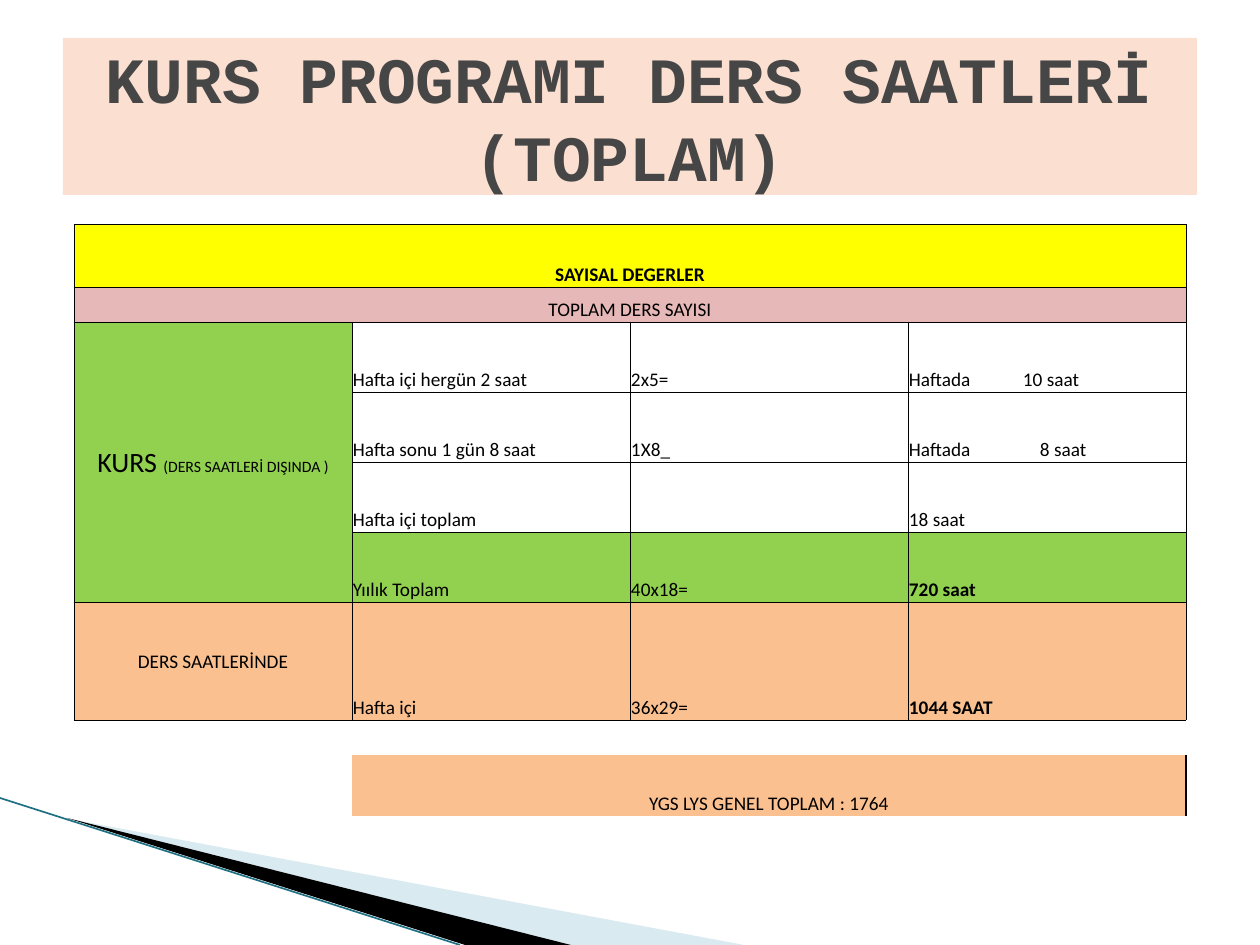
import dataclasses

import lxml.etree
import pptx
import pptx.dml.color
import pptx.enum.shapes
import pptx.enum.text
import pptx.oxml.ns
import pptx.util

SCALE = 914400 / 126
ALIGN = pptx.enum.text.PP_ALIGN
ANCHOR = pptx.enum.text.MSO_ANCHOR


@dataclasses.dataclass(frozen=True)
class Theme:
    body_font: str = "Calibri"
    title_font: str = "Courier New"
    title_size: float = 36.9
    course_size: int = 16
    body_size: int = 11
    note_size: int = 9
    ink: str = "000000"
    title_ink: str = "464646"
    title_fill: str = "FBE0D1"
    yellow: str = "FFFF00"
    rose: str = "E6B9B8"
    green: str = "92D050"
    orange: str = "FAC090"
    pale_wedge: str = "A0CBDC"
    edge: str = "1F7083"


def px(value):
    return pptx.util.Emu(round(value * SCALE))


def rgb(value):
    return pptx.dml.color.RGBColor.from_string(value)


def child(parent, tag, **attributes):
    return lxml.etree.SubElement(parent, pptx.oxml.ns.qn(tag), attributes)


def apply(target, values):
    for name, value in values.items():
        setattr(target, name, value)


class SlideBuilder:
    """Draws styled elements on the current slide."""

    def __init__(self, slide, theme):
        self.slide = slide
        self.theme = theme

    def paint(self, shape, color):
        shape.shadow.inherit = False
        shape.fill.solid()
        shape.fill.fore_color.rgb = rgb(color)
        shape.line.fill.background()

    def words(self, paragraph, text, size, color, font, bold=False):
        run = paragraph.add_run()
        run.text = text
        apply(run.font, {"size": pptx.util.Pt(size), "name": font, "bold": bold})
        run.font.color.rgb = rgb(color)

    def wedge(self, points, color, opacity=100):
        outline = self.slide.shapes.build_freeform(*points[0], scale=SCALE)
        outline.add_line_segments(points[1:], close=True)
        wedge = outline.convert_to_shape()
        self.paint(wedge, color)
        if opacity < 100:
            tint = wedge._element.spPr.find(".//" + pptx.oxml.ns.qn("a:srgbClr"))
            child(tint, "a:alpha", val=str(opacity * 1000))

    def line(self, start, end, color, width):
        edge = self.slide.shapes.add_connector(
            pptx.enum.shapes.MSO_CONNECTOR.STRAIGHT, *map(px, start + end))
        edge.line.color.rgb = rgb(color)
        edge.line.width = pptx.util.Pt(width)
        child(edge._element.spPr, "a:effectLst")

    def title(self, text, box):
        theme = self.theme
        banner = self.slide.shapes.add_shape(
            pptx.enum.shapes.MSO_SHAPE.RECTANGLE, *map(px, box))
        self.paint(banner, theme.title_fill)
        apply(banner.text_frame, {"word_wrap": True, "vertical_anchor": ANCHOR.MIDDLE})
        heading = banner.text_frame.paragraphs[0]
        heading.alignment = ALIGN.CENTER
        self.words(heading, text, theme.title_size, theme.title_ink, theme.title_font, True)

    def table(self, left, top, widths, heights):
        table = self.slide.shapes.add_table(
            len(heights), len(widths), px(left), px(top),
            px(sum(widths)), px(sum(heights))).table
        apply(table, {"first_row": False, "horz_banding": False})
        for column, width in zip(table.columns, widths):
            column.width = px(width)
        for row, height in zip(table.rows, heights):
            row.height = px(height)
        return table

    def borders(self, cell, sides, width):
        properties = cell._tc.get_or_add_tcPr()
        for side in "LRTB":
            border = child(properties, f"a:ln{side}", w=str(int(pptx.util.Pt(width))))
            if side in sides:
                child(child(border, "a:solidFill"), "a:srgbClr", val=self.theme.ink)
            else:
                child(border, "a:noFill")

    def cell(self, cell, parts, fill=None, align=ALIGN.LEFT,
             anchor=ANCHOR.BOTTOM, bold=False, tab=None):
        theme = self.theme
        apply(cell, {"margin_left": px(1), "margin_right": px(1), "margin_top": px(1),
                     "margin_bottom": 0, "vertical_anchor": anchor})
        if fill:
            cell.fill.solid()
            cell.fill.fore_color.rgb = rgb(fill)
        else:
            cell.fill.background()
        paragraph = cell.text_frame.paragraphs[0]
        paragraph.alignment = align
        if tab:
            stops = child(paragraph._p.get_or_add_pPr(), "a:tabLst")
            child(stops, "a:tab", pos=str(int(px(tab))), algn="l")
        for text, size in parts:
            self.words(paragraph, text, size, theme.ink, theme.body_font, bold)
        if not parts:
            child(paragraph._p, "a:endParaRPr", sz=str(theme.body_size * 100))


def fill_hours(builder, hours):
    theme = builder.theme
    last_row = len(hours.rows) - 1
    for row in range(last_row + 1):
        for column in range(4):
            if row < last_row - 1:
                sides, width = "LRTB", 0.5
            elif row == last_row - 1:
                sides, width = "T", 0.5
            else:
                sides, width = ("R" if column else ""), 1
            builder.borders(hours.cell(row, column), sides, width)

    for start, end in (((0, 0), (0, 3)), ((1, 0), (1, 3)),
                       ((2, 0), (5, 0)), ((8, 1), (8, 3))):
        hours.cell(*start).merge(hours.cell(*end))

    centred = {"align": ALIGN.CENTER}
    middle = {"align": ALIGN.CENTER, "anchor": ANCHOR.MIDDLE}
    spans = {
        (0, 0): ("SAYISAL DEGERLER", theme.yellow, {**centred, "bold": True}),
        (1, 0): ("TOPLAM DERS SAYISI", theme.rose, centred),
        (6, 0): ("DERS SAATLERİNDE", theme.orange, middle),
        (8, 1): ("YGS LYS GENEL TOPLAM : 1764", theme.orange, centred),
    }
    for place, (text, fill, layout) in spans.items():
        builder.cell(hours.cell(*place), [(text, theme.body_size)], fill, **layout)
    builder.cell(hours.cell(2, 0), [("KURS ", theme.course_size),
                                    ("(DERS SAATLERİ DIŞINDA )", theme.note_size)],
                 theme.green, **middle)

    lessons = (
        (("Hafta içi hergün 2 saat", "2x5=", "Haftada\t10 saat"), None, False, 114),
        (("Hafta sonu 1 gün 8 saat", "1X8_", "Haftada\t8 saat"), None, False, 131),
        (("Hafta içi toplam", "", "18 saat"), None, False, None),
        (("Yıılık Toplam", "40x18=", "720 saat"), theme.green, True, None),
        (("Hafta içi", "36x29=", "1044 SAAT"), theme.orange, True, None),
    )
    for row, (texts, fill, total, tab) in enumerate(lessons, 2):
        for column, text in enumerate(texts, 1):
            last = column == 3
            builder.cell(hours.cell(row, column),
                         [(text, theme.body_size)] if text else [], fill,
                         bold=total and last, tab=tab if last else None)
    for place in [(7, column) for column in range(4)] + [(8, 0)]:
        builder.cell(hours.cell(*place), [])


def main():
    deck = pptx.Presentation()
    apply(deck, {"slide_width": px(1260), "slide_height": px(945)})
    theme = Theme()
    builder = SlideBuilder(deck.slides.add_slide(deck.slide_layouts[6]), theme)
    builder.wedge([(69, 819), (744, 945), (571, 945)], theme.pale_wedge, 40)
    builder.wedge([(67, 818), (571, 945), (465, 945)], theme.ink)
    builder.line((0, 798), (460, 945), theme.edge, 0.95)
    hours = builder.table(74, 224, [278] * 4, [63, 35] + [70] * 4 + [118, 35, 61])
    fill_hours(builder, hours)
    builder.title("KURS PROGRAMI DERS SAATLERİ (TOPLAM)", (63, 38, 1134, 157))
    deck.save("out.pptx")


if __name__ == "__main__":
    main()
